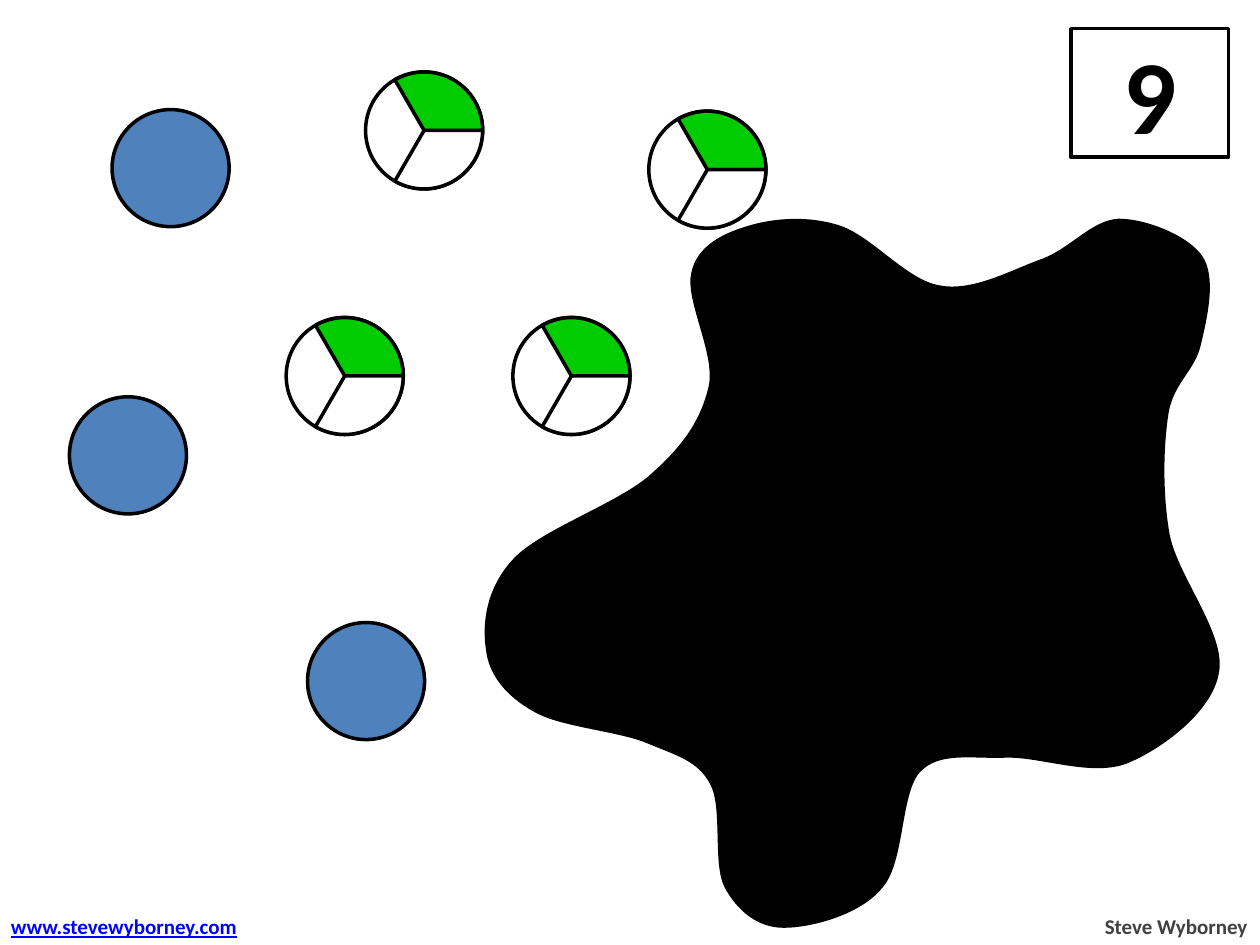
from pptx import Presentation
from pptx import util as u
from pptx.dml.color import RGBColor
from pptx.enum import shapes, text
from pptx.oxml.ns import qn
from lxml import etree

KIND = shapes.MSO_SHAPE
ALIGN = text.PP_ALIGN
SIZE = 2.36
WHOLES = [(2.26, 2.21), (6.2, 12.55), (1.4, 8)]
THIRDS = [(7.37, 1.45), (10.34, 6.4), (5.77, 6.4), (13.08, 2.24)]
START = (425, 564)
CURVES = [
    (403, 552, 389, 535, 387, 515), (384, 495, 387, 467, 409, 444),
    (431, 421, 493, 400, 518, 377), (544, 354, 558, 333, 564, 306),
    (569, 280, 545, 238, 550, 217), (554, 197, 573, 187, 593, 181),
    (612, 175, 639, 172, 665, 180), (691, 188, 719, 224, 746, 228),
    (773, 233, 804, 215, 827, 207), (851, 198, 867, 176, 888, 175),
    (909, 175, 942, 188, 953, 204), (964, 220, 957, 251, 952, 272),
    (948, 293, 930, 303, 926, 328), (922, 354, 921, 391, 927, 425),
    (934, 459, 972, 504, 966, 534), (961, 564, 921, 594, 893, 605),
    (865, 615, 825, 599, 798, 600), (770, 601, 745, 595, 729, 612),
    (713, 630, 717, 684, 699, 704), (682, 725, 643, 735, 622, 735),
    (602, 735, 586, 722, 576, 703), (567, 684, 575, 641, 565, 622),
    (555, 603, 539, 599, 515, 589), (492, 579, 446, 576, 425, 564),
]


def color(code):
    return RGBColor.from_string(code)


def paint(shape, fill):
    shape.shadow.inherit = False
    shape.fill.solid()
    shape.fill.fore_color.rgb = color(fill)
    shape.line.color.rgb = color("000000")
    shape.line.width = u.Pt(2)
    return shape


def draw(parent, kind, x, y, wide, high, fill):
    box = [u.Cm(v) for v in (x, y, wide, high)]
    return paint(parent.add_shape(kind, *box), fill)


def write(shape, words, size=12, ink="404040", align=ALIGN.LEFT, under=False):
    para = shape.text_frame.paragraphs[0]
    para.alignment = align
    run = para.add_run()
    run.text = words
    font = run.font
    font.name, font.size, font.bold = "Calibri", u.Pt(size), True
    font.underline = under
    font.color.rgb = color(ink)


def label(parent, words, x, wide, **style):
    box = parent.add_textbox(u.Cm(x), u.Cm(18.29), u.Cm(wide), u.Cm(0.76))
    box.text_frame.word_wrap = False
    box.text_frame.auto_size = text.MSO_AUTO_SIZE.SHAPE_TO_FIT_TEXT
    write(box, words, **style)


def number(parent, words):
    card = draw(parent, KIND.RECTANGLE, 21.59, 0.58, 3.18, 2.59, "FFFFFF")
    card.text_frame.vertical_anchor = text.MSO_ANCHOR.MIDDLE
    write(card, words, size=60, ink="000000", align=ALIGN.CENTER)


def disc(parent, x, y, fill):
    draw(parent, KIND.OVAL, x, y, SIZE, SIZE, fill)


def third(parent, x, y):
    group = parent.add_group_shape().shapes
    disc(group, x, y, "FFFFFF")
    for turn, fill in ((240, "00CC00"), (0, "FFFFFF")):
        slice = draw(group, KIND.PIE, x, y, SIZE, SIZE, fill)
        slice.adjustments[0] = 0
        slice.adjustments[1] = 72
        slice.rotation = turn


def blob(parent):
    pen = parent.build_freeform(*START, scale=u.Cm(2.54) / 100)
    for curve in CURVES:
        pen.add_line_segments(list(zip(curve[::2], curve[1::2])), close=False)
    shape = paint(pen.convert_to_shape(), "000000")
    lines = list(shape.element.iter(qn("a:lnTo")))
    track = lines[0].getparent()
    for i in range(0, len(lines), 3):
        bend = etree.SubElement(track, qn("a:cubicBezTo"))
        for line in lines[i:i + 3]:
            bend.append(line[0])
            track.remove(line)
    etree.SubElement(track, qn("a:close"))


def main():
    deck = Presentation()
    deck.slide_width, deck.slide_height = u.Cm(25.4), u.Cm(19.05)
    page = deck.slides.add_slide(deck.slide_layouts[6]).shapes
    number(page, "9")
    label(page, "Steve Wyborney", 22, 3.4, align=ALIGN.RIGHT)
    label(page, "www.stevewyborney.com", -0.03, 5.21, ink="0000FF", under=True)
    for x, y in WHOLES:
        disc(page, x, y, "4F81BD")
    for x, y in THIRDS:
        third(page, x, y)
    blob(page)
    deck.save("out.pptx")


if __name__ == "__main__":
    main()
